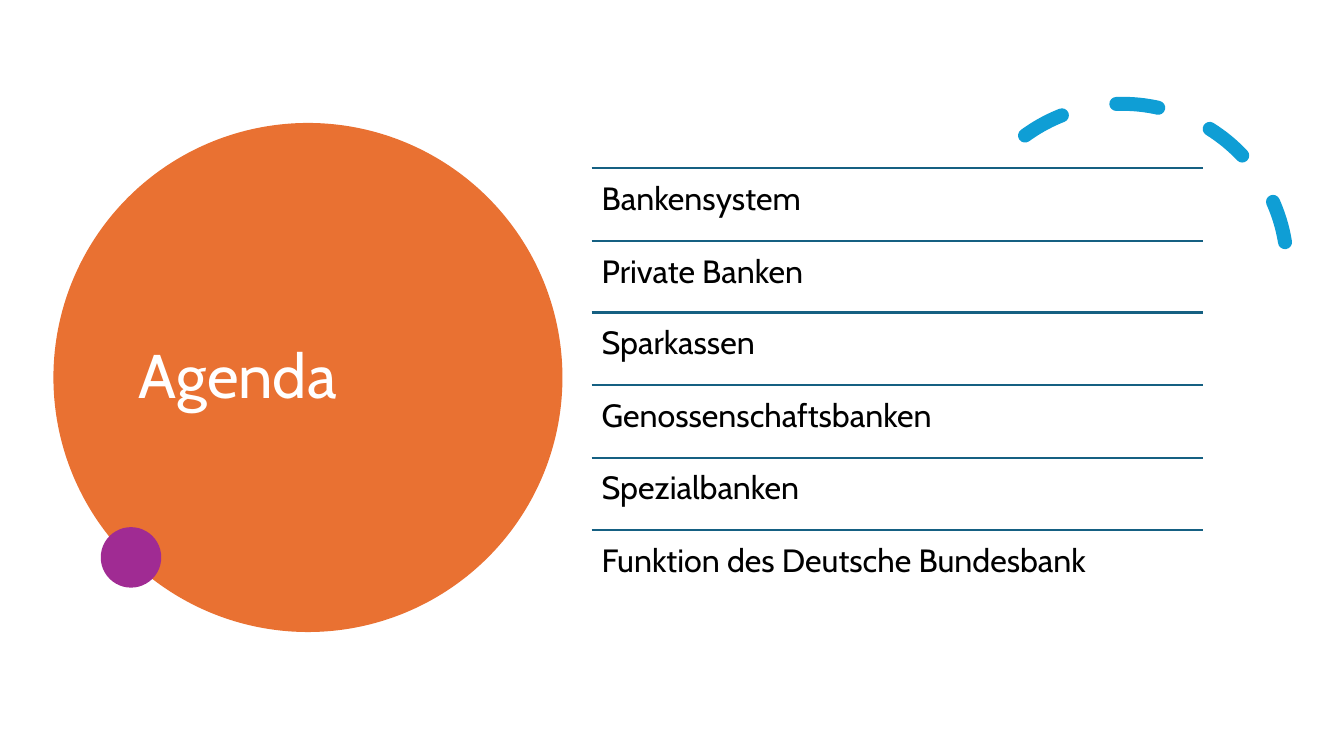
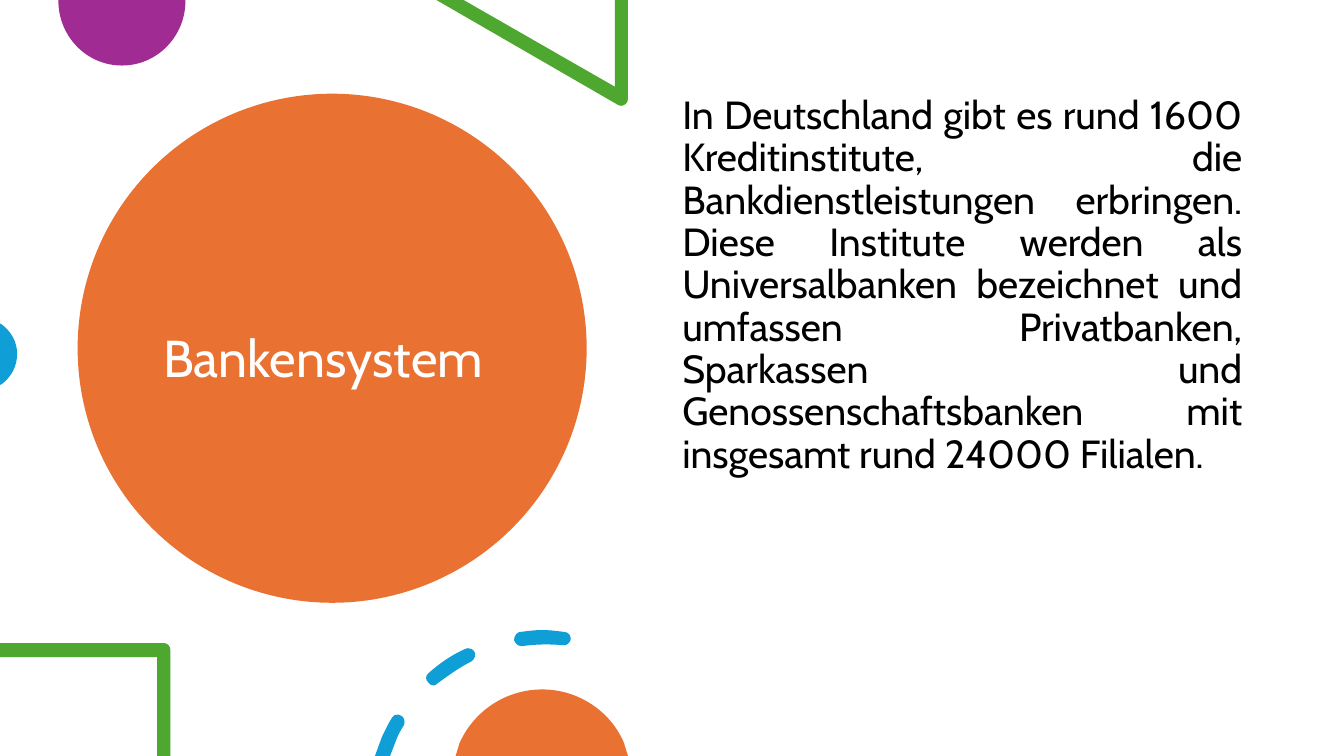
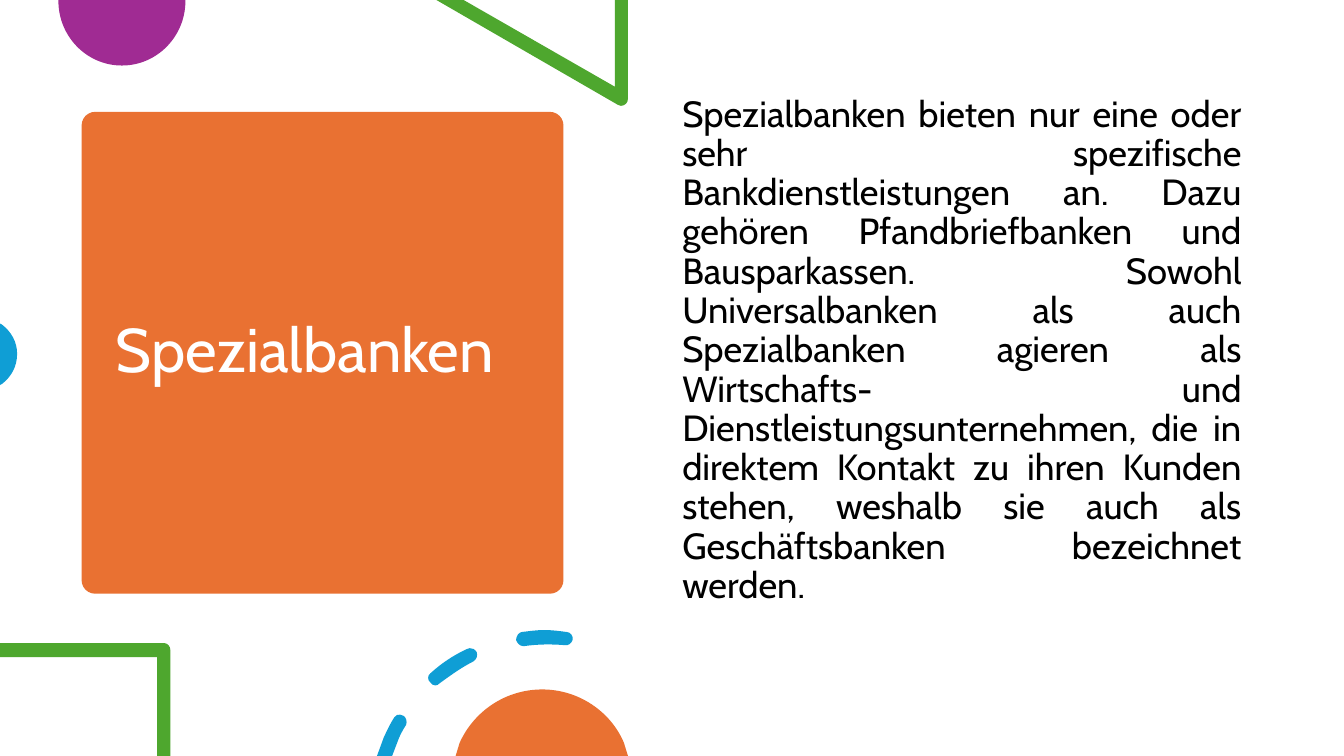
import lxml.etree
import pptx
import pptx.dml.color
import pptx.enum.dml
import pptx.enum.shapes
import pptx.enum.text
import pptx.oxml.ns
import pptx.util

PX = 9144  # EMU per px, 100 px to the inch
SHAPE = pptx.enum.shapes.MSO_SHAPE
ALIGN = pptx.enum.text.PP_ALIGN
ANCHOR = pptx.enum.text.MSO_ANCHOR
qn = pptx.oxml.ns.qn

COLORS = {
    "white": "FFFFFF",
    "text": "000000",
    "orange": "E97132",
    "purple": "A02B93",
    "green": "4EA72E",
    "blue": "0F9ED5",
    "rule": "156082",
}

# Outlines: a pair is a straight step, six numbers are a cubic curve
PURPLE_DISC = [[(184, 0), (58, 0), (58, 1), (58, 36, 86, 65, 121, 65),
                (156, 65, 184, 36, 184, 1)]]
GREEN_TRIANGLE = [[(623, 0), (610, 0), (610, 86), (460, 0), (433, 0), (613, 104),
                   (614, 105, 615, 105, 616, 105), (620, 105, 623, 102, 623, 98)]]
BLUE_DISC = [[(0, 321), (0, 382), (2, 381), (11, 374, 17, 364, 17, 351),
              (17, 339, 11, 329, 2, 322)]]
GREEN_FRAME = [[(163, 638), (0, 638), (0, 652), (156, 652), (156, 750), (169, 750),
                (169, 645), (169, 641, 166, 638, 163, 638)]]
BLUE_DASHES = [
    [(395, 709), (393, 708, 390, 710, 389, 712), (385, 718, 382, 725, 379, 731),
     (372, 750), (387, 750), (392, 737), (394, 731, 397, 725, 401, 719),
     (402, 716, 401, 711, 398, 710), (397, 709, 396, 709, 395, 709)],
    [(464, 643), (463, 643, 462, 643, 461, 644), (448, 650, 436, 658, 425, 668),
     (422, 670, 422, 675, 425, 677), (426, 679, 428, 680, 430, 680), (430, 680),
     (432, 680, 433, 679, 434, 678), (445, 670, 456, 662, 468, 656),
     (471, 654, 472, 650, 471, 647), (469, 644, 467, 643, 464, 643)],
    [(538, 625), (531, 625, 524, 626, 516, 627), (513, 627, 510, 631, 510, 635),
     (511, 638, 514, 641, 517, 641), (518, 641, 518, 641, 518, 641),
     (532, 639, 545, 639, 558, 640), (562, 641, 565, 638, 566, 635),
     (567, 631, 564, 627, 560, 627), (560, 627, 560, 627, 560, 627),
     (553, 626, 545, 625, 538, 625)],
]
ORANGE_DISC = [[(538, 684), (501, 684, 470, 706, 456, 737), (452, 750), (623, 750),
                (619, 737), (606, 706, 574, 684, 538, 684)]]


class Deck:
    font = "Cabin"

    def __init__(self):
        self.prs = pptx.Presentation()
        self.prs.slide_width = pptx.util.Inches(40 / 3)
        self.prs.slide_height = pptx.util.Inches(7.5)
        self.s = None

    def color(self, name):
        return pptx.dml.color.RGBColor.from_string(COLORS[name])

    def slide(self):
        self.s = self.prs.slides.add_slide(self.prs.slide_layouts[6])

    def paint(self, sp, color):
        sp.shadow.inherit = False
        sp.fill.solid()
        sp.fill.fore_color.rgb = self.color(color)
        sp.line.fill.background()

    def shape(self, kind, x, y, size, color, adjust=()):
        sp = self.s.shapes.add_shape(kind, x * PX, y * PX, size * PX, size * PX)
        self.paint(sp, color)
        for i, value in enumerate(adjust):
            sp.adjustments[i] = value

    def outline(self, contours, color, dx=0):
        """Draw contours through their end points, then bend the curved steps."""
        builder = None
        for contour in contours:
            ends = [(step[-2] + dx, step[-1]) for step in contour]
            if builder is None:
                builder = self.s.shapes.build_freeform(*ends[0], scale=PX)
            else:
                builder.move_to(*ends[0])
            # A closing pair is added for each contour
            builder.add_line_segments(ends[1:], close=True)
        sp = builder.convert_to_shape()
        left, top = round(sp.left / PX), round(sp.top / PX)
        lines = sp._element.iter(qn("a:moveTo"), qn("a:lnTo"), qn("a:close"))
        self.bend(list(lines), contours, left - dx, top)
        self.paint(sp, color)

    def bend(self, nodes, contours, left, top):
        starts = [i for i, node in enumerate(nodes) if node.tag == qn("a:moveTo")]
        for start, contour in zip(starts, contours):
            for node, step in zip(nodes[start:], contour):
                if len(step) == 2:
                    continue
                node.tag = qn("a:cubicBezTo")
                for i in (0, 2):
                    pt = lxml.etree.Element(qn("a:pt"))
                    pt.set("x", str(step[i] - left))
                    pt.set("y", str(step[i + 1] - top))
                    node.insert(i // 2, pt)

    def dashed_arc(self, x, y, size, color, rotation, angles):
        sp = self.s.shapes.add_shape(SHAPE.ARC, x * PX, y * PX, size * PX, size * PX)
        sp.shadow.inherit = False
        sp.rotation = rotation
        for i, angle in enumerate(angles):
            sp.adjustments[i] = angle * 0.6  # 60000 units a degree over 100000
        sp.fill.background()
        sp.line.color.rgb = self.color(color)
        sp.line.width = pptx.util.Pt(10)
        sp.line.dash_style = pptx.enum.dml.MSO_LINE.DASH
        sp.line._get_or_add_ln().set("cap", "rnd")

    def rule(self, x, y, width, color):
        line = self.s.shapes.add_connector(
            pptx.enum.shapes.MSO_CONNECTOR.STRAIGHT, x * PX, y * PX, (x + width) * PX, y * PX)
        line.line.color.rgb = self.color(color)
        line.line.width = pptx.util.Pt(1.5)
        lxml.etree.SubElement(line._element.spPr, qn("a:effectLst"))

    def text(self, text, x, y, w, h, size, color="text", align=ALIGN.LEFT,
             anchor=ANCHOR.TOP, spacing=0.9, inset=5):
        tf = self.s.shapes.add_textbox(x * PX, y * PX, w * PX, h * PX).text_frame
        tf.word_wrap = True
        tf.vertical_anchor = anchor
        tf.margin_left = tf.margin_right = 10 * PX
        tf.margin_top = tf.margin_bottom = inset * PX
        p = tf.paragraphs[0]
        p.text = text
        p.alignment = align
        p.line_spacing = spacing
        p.font.name = self.font
        p.font.size = pptx.util.Pt(size)
        p.font.color.rgb = self.color(color)

    def title(self, text, x, y, w, h, size=44):
        self.text(text, x, y, w, h, size, "white", anchor=ANCHOR.MIDDLE)

    def body(self, text, size):
        self.text(text, 667, 90, 575, 535, size, align=ALIGN.JUSTIFY)

    def top_decoration(self):
        self.outline(PURPLE_DISC, "purple")
        self.outline(GREEN_TRIANGLE, "green")
        self.outline(BLUE_DISC, "blue")

    def bottom_decoration(self, dash_shift=0):
        self.outline(GREEN_FRAME, "green")
        self.outline(BLUE_DASHES, "blue", dash_shift)
        self.outline(ORANGE_DISC, "orange")


def main():
    deck = Deck()

    # Agenda
    deck.slide()
    deck.shape(SHAPE.OVAL, 53, 122, 505, "orange")
    deck.title("Agenda", 128, 153, 354, 445)
    deck.dashed_arc(950, 103, 327, "blue", 330.2, (263.62, 29.69))
    deck.shape(SHAPE.OVAL, 100, 523, 60, "purple")
    topics = ["Bankensystem", "Private Banken", "Sparkassen", "Genossenschaftsbanken",
              "Spezialbanken", "Funktion des Deutsche Bundesbank"]
    for i, topic in enumerate(topics):
        y = round(167 + i * 71.75)
        deck.rule(587, y, 606, "rule")
        deck.text(topic, 587, y, 605, 72, 23, spacing=1.0, inset=10)

    # Banking system
    deck.slide()
    deck.shape(SHAPE.OVAL, 77, 93, 505, "orange")
    deck.title("Bankensystem", 152, 135, 354, 445, size=37)
    deck.top_decoration()
    deck.body("In Deutschland gibt es rund 1600 Kreditinstitute, die Bankdienstleistungen "
              "erbringen. Diese Institute werden als Universalbanken bezeichnet und umfassen "
              "Privatbanken, Sparkassen und Genossenschaftsbanken mit insgesamt rund 24000 "
              "Filialen.", 28)
    deck.bottom_decoration()

    # Special banks
    deck.slide()
    deck.shape(SHAPE.ROUNDED_RECTANGLE, 81, 111, 478, "orange", [0.028])
    deck.title("Spezialbanken", 105, 122, 431, 456)
    deck.top_decoration()
    deck.body("Spezialbanken bieten nur eine oder sehr spezifische Bankdienstleistungen an. "
              "Dazu gehören Pfandbriefbanken und Bausparkassen. Sowohl Universalbanken als "
              "auch Spezialbanken agieren als Wirtschafts- und Dienstleistungsunternehmen, "
              "die in direktem Kontakt zu ihren Kunden stehen, weshalb sie auch als "
              "Geschäftsbanken bezeichnet werden.", 26)
    deck.bottom_decoration(dash_shift=2)

    deck.prs.save("out.pptx")


if __name__ == "__main__":
    main()
